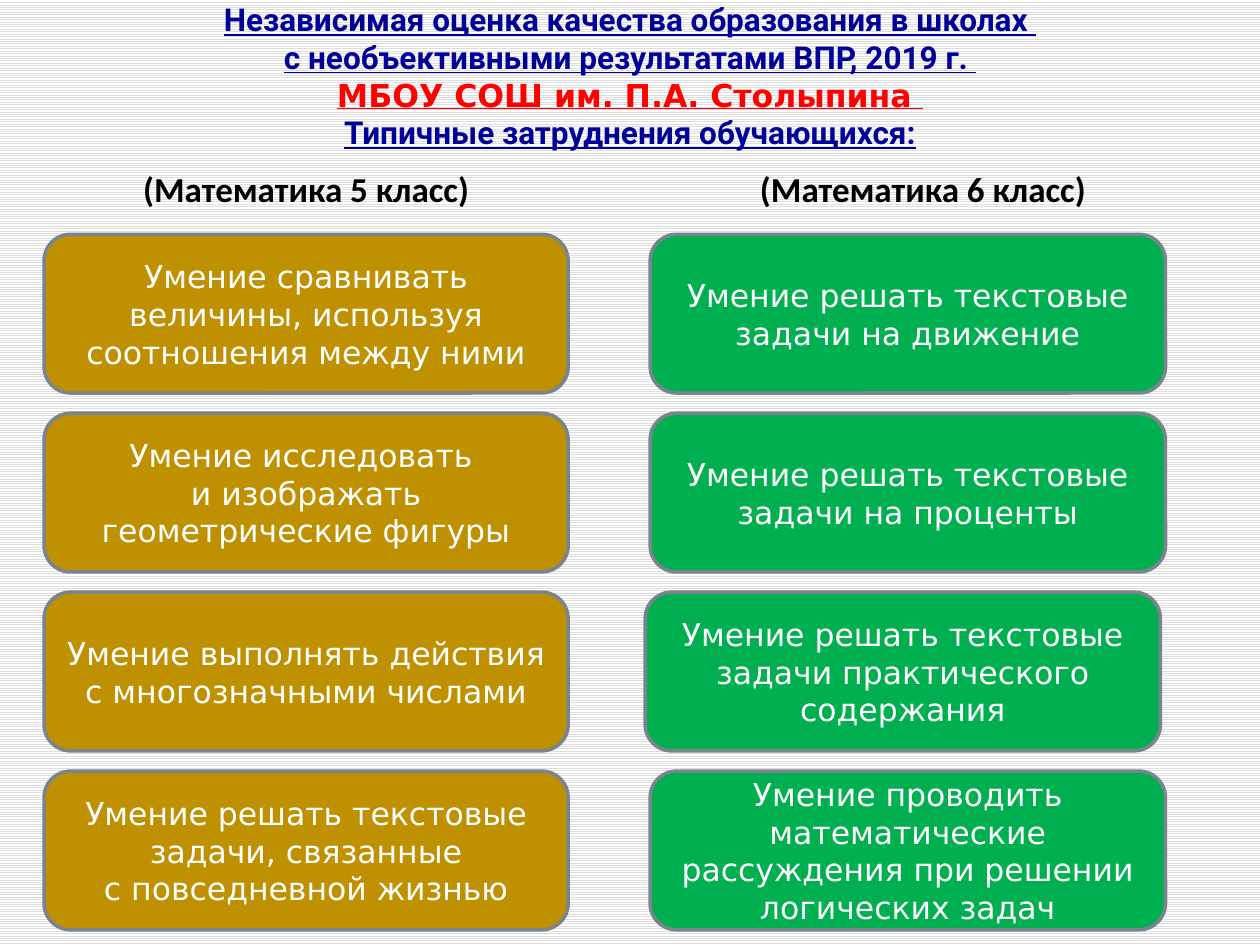
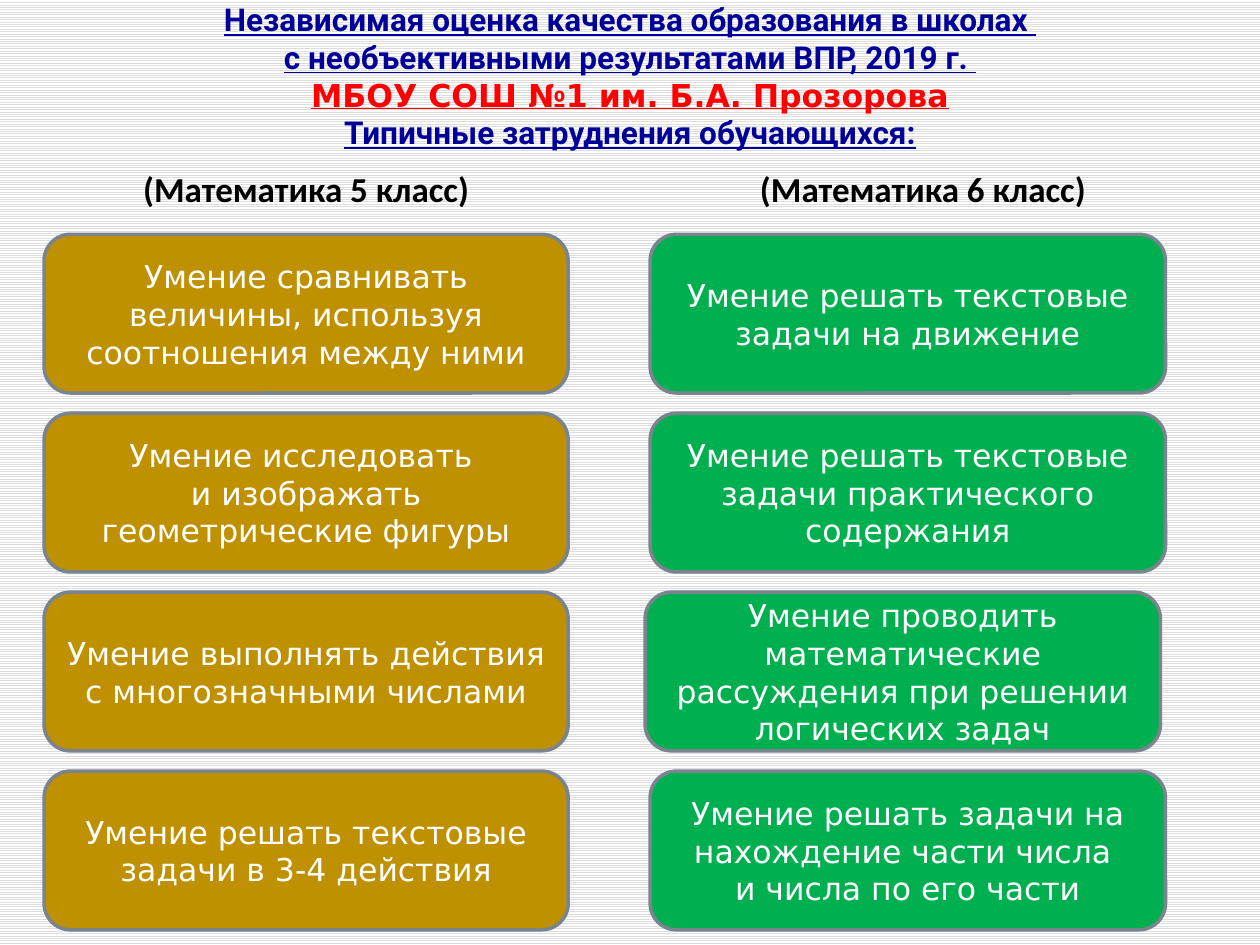
from pptx import Presentation
from pptx.dml.color import RGBColor
from pptx.enum.dml import MSO_PATTERN
from pptx.enum.shapes import MSO_SHAPE
from pptx.enum.text import MSO_ANCHOR, PP_ALIGN
from pptx.util import Inches, Pt

NAVY, RED, BLACK, WHITE = "000099", "FF0000", "000000", "FFFFFF"
GOLD, GREEN, BORDER, STRIPE = "BF9000", "00B050", "79848F", "DDDDDD"
TITLE_FONT, HEADING_FONT, BODY_FONT = "Roboto", "Calibri", "DejaVu Sans"

ROW_TOP, ROW_PITCH, CARD_HEIGHT = 1.86, 1.417, 1.26
ROW_TOP, ROW_PITCH = 1.86, 1.42
GRADE_5_LEFTS = (0.35, 0.35, 0.35, 0.35)
GRADE_6_LEFTS = (5.16, 5.16, 5.12, 5.16)

COMPARING = "Умение сравнивать величины, используя соотношения между ними"
FIGURES = "Умение исследовать \nи изображать геометрические фигуры"
LARGE_NUMBERS = "Умение выполнять действия с многозначными числами"
MOTION = "Умение решать текстовые задачи на движение"
PRACTICAL = "Умение решать текстовые задачи практического содержания"
REASONING = "Умение проводить математические рассуждения при решении логических задач"

SCHOOLS = [
    ("МБОУ СОШ им. П.А. Столыпина ",
     [COMPARING, FIGURES, LARGE_NUMBERS,
      "Умение решать текстовые задачи, связанные\nс повседневной жизнью"],
     [MOTION, "Умение решать текстовые задачи на проценты", PRACTICAL, REASONING]),
    ("МБОУ СОШ №1 им. Б.А. Прозорова",
     [COMPARING, FIGURES, LARGE_NUMBERS,
      "Умение решать текстовые задачи в 3-4 действия"],
     [MOTION, PRACTICAL, REASONING,
      "Умение решать задачи на нахождение части числа \nи числа по его части"]),
]


def rgb(color):
    """Turn a hex string into a colour."""
    return RGBColor.from_string(color)


def style_run(r, font, size, color, bold=False, underline=False):
    """Set the look of one run."""
    r.font.name = font
    r.font.size = Pt(size)
    r.font.color.rgb = rgb(color)
    r.font.bold = bold
    r.font.underline = underline


def set_background(s):
    """Fill the slide with thin horizontal stripes."""
    fill = s.background.fill
    fill.patterned()
    fill.pattern = MSO_PATTERN.LIGHT_HORIZONTAL
    fill.fore_color.rgb = rgb(STRIPE)
    fill.back_color.rgb = rgb(WHITE)


def add_text_box(s, left, top, width, height, text, anchor):
    """Add a centred one-paragraph text box and return its paragraph."""
    sp = s.shapes.add_textbox(Inches(left), Inches(top), Inches(width), Inches(height))
    tf = sp.text_frame
    tf.word_wrap = True
    tf.vertical_anchor = anchor
    p = tf.paragraphs[0]
    p.text = text
    p.alignment = PP_ALIGN.CENTER
    return p


def add_title(s, school):
    """Add the four-line title with the school name in red."""
    lines = ["Независимая оценка качества образования в школах ",
             "с необъективными результатами ВПР, 2019 г. ",
             school,
             "Типичные затруднения обучающихся:"]
    p = add_text_box(s, 0.75, 0.7, 8.5, 0.55, "\v".join(lines), MSO_ANCHOR.BOTTOM)
    for r in p.runs:
        font, color = (BODY_FONT, RED) if r.text == school else (TITLE_FONT, NAVY)
        style_run(r, font, 18, color, bold=True, underline=True)


def add_heading(s, left, width, grade):
    """Add the heading of one grade's column."""
    p = add_text_box(s, left, 1.18, width, 0.68, f"(Математика {grade} класс)",
                     MSO_ANCHOR.MIDDLE)
    p.line_spacing = 0.9
    style_run(p.runs[0], HEADING_FONT, 20, BLACK, bold=True)


def add_card(s, left, top, width, color, text):
    """Add a rounded card naming one skill."""
    sp = s.shapes.add_shape(MSO_SHAPE.ROUNDED_RECTANGLE, Inches(left), Inches(top),
                            Inches(width), Inches(CARD_HEIGHT))
    sp.shadow.inherit = False
    sp.fill.solid()
    sp.fill.fore_color.rgb = rgb(color)
    sp.line.color.rgb = rgb(BORDER)
    sp.line.width = Pt(2)
    tf = sp.text_frame
    tf.word_wrap = True
    tf.vertical_anchor = MSO_ANCHOR.MIDDLE
    tf.text = text
    for p in tf.paragraphs:
        p.alignment = PP_ALIGN.CENTER
        style_run(p.runs[0], BODY_FONT, 18, WHITE)


def add_column(s, lefts, width, color, skills):
    """Stack one grade's skill cards."""
    for row, (left, skill) in enumerate(zip(lefts, skills)):
        add_card(s, left, ROW_TOP + row * ROW_PITCH, width, color, skill)


def add_school_slide(prs, school, grade_5_skills, grade_6_skills):
    """Add the slide of one school."""
    s = prs.slides.add_slide(prs.slide_layouts[6])
    set_background(s)
    add_title(s, school)
    add_heading(s, 0.94, 2.98, 5)
    add_heading(s, 5.87, 2.91, 6)
    add_column(s, GRADE_5_LEFTS, 4.16, GOLD, grade_5_skills)
    add_column(s, GRADE_6_LEFTS, 4.09, GREEN, grade_6_skills)


def main():
    """Build the presentation."""
    prs = Presentation()
    prs.slide_width = Inches(10)
    prs.slide_height = Inches(7.5)
    for school, grade_5_skills, grade_6_skills in SCHOOLS:
        add_school_slide(prs, school, grade_5_skills, grade_6_skills)
    prs.save("out.pptx")


if __name__ == "__main__":
    main()
